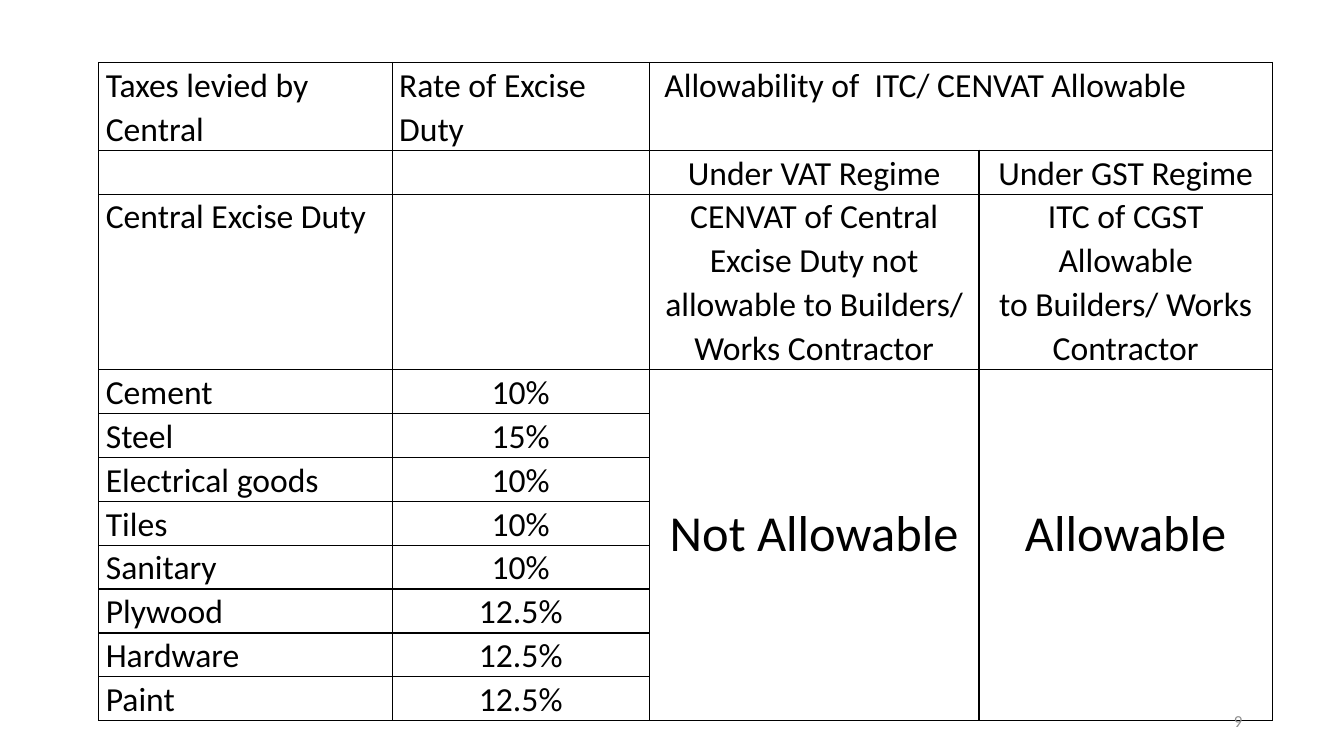
from dataclasses import dataclass

import pptx
import pptx.dml.color
import pptx.enum.text
import pptx.oxml
import pptx.oxml.ns
import pptx.util

Inches = pptx.util.Inches
Align = pptx.enum.text.PP_ALIGN
Anchor = pptx.enum.text.MSO_ANCHOR


@dataclass(frozen=True)
class Theme:
    font: str = "Calibri"
    ink: str = "000000"
    muted: str = "8C8C8C"
    body_size: int = 24
    verdict_size: int = 36
    number_size: int = 12
    line_spacing: float = 1.07
    border_width: int = 1


@dataclass(frozen=True)
class Entry:
    row: int
    column: int
    lines: tuple[str, ...]
    align: Align = Align.CENTER
    size: int = Theme.body_size
    rows: int = 1
    columns: int = 1
    anchor: Anchor = Anchor.TOP
    left: float = 0.07
    bottom: float = 0


THEME = Theme()
COLUMN_WIDTHS = (2.91, 2.55, 3.27, 2.91)
HEADING_HEIGHTS = (0.84, 0.41, 1.65)
GOODS_HEIGHT = 0.41
GOODS = (
    ("Cement", "10%"),
    ("Steel", "15%"),
    ("Electrical goods", "10%"),
    ("Tiles", "10%"),
    ("Sanitary", "10%"),
    ("Plywood", "12.5%"),
    ("Hardware", "12.5%"),
    ("Paint", "12.5%"),
)
FIRST_GOODS_ROW = len(HEADING_HEIGHTS)
HEADINGS = (
    Entry(0, 0, ("Taxes levied by Central",), Align.LEFT),
    Entry(0, 1, ("Rate of Excise Duty",), Align.LEFT),
    Entry(0, 2, ("Allowability of  ITC/ CENVAT Allowable",), Align.LEFT,
          columns=2, left=0.15),
    Entry(1, 2, ("Under VAT Regime",)),
    Entry(1, 3, ("Under GST Regime",)),
    Entry(2, 0, ("Central Excise Duty",), Align.LEFT),
    Entry(2, 2, ("CENVAT of Central Excise Duty not allowable to Builders/ Works Contractor",)),
    Entry(2, 3, ("ITC of CGST Allowable", "to Builders/ Works Contractor")),
)


def add_text(paragraph, text: str, size: int, color: str, align: Align) -> None:
    paragraph.alignment = align
    span = paragraph.add_run()
    span.text = text
    span.font.name = THEME.font
    span.font.size = pptx.util.Pt(size)
    span.font.color.rgb = pptx.dml.color.RGBColor.from_string(color)


def style_cell(cell) -> None:
    """Clear the fill, tighten the margins and rule all four sides."""
    cell.fill.background()
    cell.margin_left = cell.margin_right = Inches(0.07)
    cell.margin_top = cell.margin_bottom = 0
    properties = cell._tc.get_or_add_tcPr()
    width = pptx.util.Pt(THEME.border_width)
    for position, side in enumerate("LRTB"):
        properties.insert(position, pptx.oxml.parse_xml(
            f'<a:ln{side} {pptx.oxml.ns.nsdecls("a")} w="{width}">'
            f'<a:solidFill><a:srgbClr val="{THEME.ink}"/></a:solidFill></a:ln{side}>'))


def fill_entry(table, entry: Entry) -> None:
    cell = table.cell(entry.row, entry.column)
    if entry.rows * entry.columns > 1:
        cell.merge(table.cell(entry.row + entry.rows - 1, entry.column + entry.columns - 1))
    cell.vertical_anchor = entry.anchor
    cell.margin_left = Inches(entry.left)
    cell.margin_bottom = Inches(entry.bottom)
    for index, line in enumerate(entry.lines):
        frame = cell.text_frame
        para = frame.add_paragraph() if index else frame.paragraphs[0]
        para.line_spacing = THEME.line_spacing
        add_text(para, line, entry.size, THEME.ink, entry.align)


def add_tax_table(page) -> None:
    heights = HEADING_HEIGHTS + (GOODS_HEIGHT,) * len(GOODS)
    table = page.shapes.add_table(
        len(heights), len(COLUMN_WIDTHS), Inches(0.98), Inches(0.62),
        Inches(sum(COLUMN_WIDTHS)), Inches(sum(heights))).table
    table.first_row = table.horz_banding = False
    for column, width in zip(table.columns, COLUMN_WIDTHS):
        column.width = Inches(width)
    for row, height in zip(table.rows, heights):
        row.height = Inches(height)
    for cell in table.iter_cells():
        style_cell(cell)

    # Headings
    for entry in HEADINGS:
        fill_entry(table, entry)

    # Goods and their rates
    for row, (goods, rate) in enumerate(GOODS, FIRST_GOODS_ROW):
        fill_entry(table, Entry(row, 0, (goods,), Align.LEFT))
        fill_entry(table, Entry(row, 1, (rate,)))

    # Verdict for each regime, beside all the goods
    for column, verdict in enumerate(("Not Allowable", "Allowable"), 2):
        fill_entry(table, Entry(FIRST_GOODS_ROW, column, (verdict,), size=THEME.verdict_size,
                                rows=len(GOODS), anchor=Anchor.MIDDLE, bottom=0.26))


def add_page_number(page, number: str) -> None:
    box = page.shapes.add_textbox(Inches(9.42), Inches(6.95), Inches(3), Inches(0.4))
    frame = box.text_frame
    frame.word_wrap = True
    frame.vertical_anchor = Anchor.MIDDLE
    add_text(frame.paragraphs[0], number, THEME.number_size, THEME.muted, Align.RIGHT)


def main() -> None:
    deck = pptx.Presentation()
    deck.slide_width, deck.slide_height = Inches(13.33), Inches(7.5)
    page = deck.slides.add_slide(deck.slide_layouts[6])
    add_tax_table(page)
    add_page_number(page, "9")
    deck.save("out.pptx")


if __name__ == "__main__":
    main()
